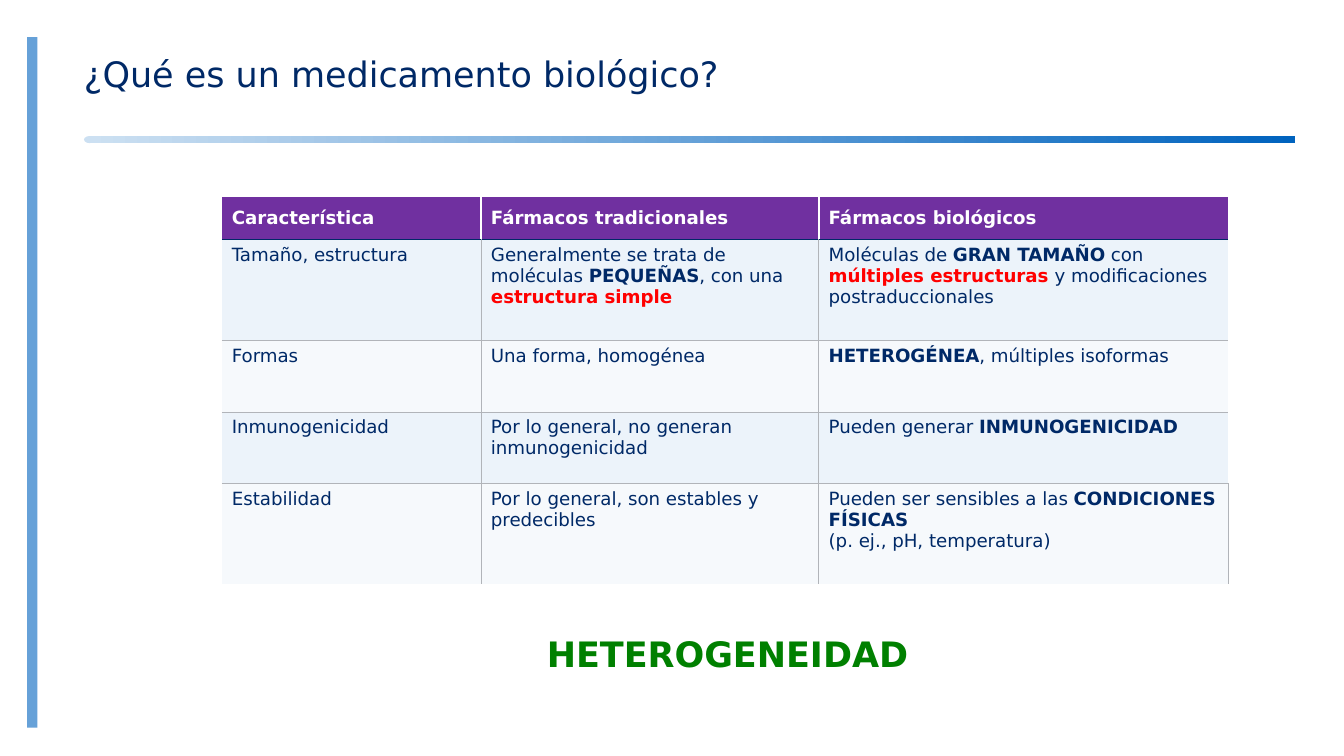
from dataclasses import dataclass
from pptx import Presentation
from pptx.dml.color import RGBColor
from pptx.enum.shapes import MSO_SHAPE
from pptx.enum.text import MSO_ANCHOR, PP_ALIGN
from pptx.oxml import parse_xml
from pptx.oxml.ns import nsdecls
from pptx.util import Inches, Pt


@dataclass(frozen=True)
class Theme:
    font: str = "DejaVu Sans"
    navy: str = "002967"
    white: str = "FFFFFF"
    red: str = "FF0000"
    green: str = "008000"
    purple: str = "7030A0"
    pale: str = "CCE0F2"
    blue: str = "0063BE"
    rail: str = "66A1D8"
    grey: str = "B1B4B9"
    bands: tuple = ("ECF3FA", "F6F9FC")
    big: int = 25
    lead: int = 26
    small: int = 13


theme = Theme()
rgb = RGBColor.from_string
deck = Presentation()
deck.slide_width, deck.slide_height = Inches(13.33), Inches(7.5)
slide = deck.slides.add_slide(deck.slide_layouts[5])
shapes = slide.shapes


def place(x, y, w, h):
    """Turn percentages of the slide into left, top, width and height."""
    wide, high = deck.slide_width, deck.slide_height
    return [int(side * part / 100)
            for side, part in zip((wide, high, wide, high), (x, y, w, h))]


def write(par, text, size, color, bold=False):
    """Add runs split at |; a leading * is bold, a leading ! bold and red."""
    for part in text.split("|"):
        mark = part[:1] if part[:1] in ("*", "!") else ""
        run = par.add_run()
        run.text = part[len(mark):]
        look = {"name": theme.font, "size": Pt(size), "bold": bold or bool(mark)}
        for key, value in look.items():
            setattr(run.font, key, value)
        run.font.color.rgb = rgb(theme.red if mark == "!" else color)


# Rule under the title and rail at the left
decor = [
    (MSO_SHAPE.RECTANGLE, (6.67, 18, 89.7, 0.93), None),
    (MSO_SHAPE.OVAL, (6.25, 18, 0.83, 0.93), theme.pale),
    (MSO_SHAPE.RECTANGLE, (2.03, 4.93, 0.75, 91.33), theme.rail),
]
for kind, area, color in decor:
    shape = shapes.add_shape(kind, *place(*area))
    shape.shadow.inherit = False
    shape.line.fill.background()
    if color:
        shape.fill.solid()
        shape.fill.fore_color.rgb = rgb(color)
    else:
        shape.fill.gradient()
        shape.fill.gradient_angle = 0
        for stop, tint in zip(shape.fill.gradient_stops, (theme.pale, theme.blue)):
            stop.color.rgb = rgb(tint)

# Title and closing word
title = shapes.title
title.left, title.top, title.width, title.height = place(6.25, 4.53, 72.75, 11.07)
close = shapes.add_textbox(*place(16.5, 81.33, 75.25, 11.07))
lines = [
    (title, "¿Qué es un medicamento biológico?", theme.navy, PP_ALIGN.LEFT),
    (close, "*HETEROGENEIDAD", theme.green, PP_ALIGN.CENTER),
]
inset = {"margin_left": 0, "margin_right": 0, "margin_top": 0, "margin_bottom": 0,
         "word_wrap": True, "vertical_anchor": MSO_ANCHOR.MIDDLE}
for shape, text, color, align in lines:
    frame = shape.text_frame
    for key, value in inset.items():
        setattr(frame, key, value)
    par = frame.paragraphs[0]
    par.alignment, par.line_spacing = align, Pt(theme.lead)
    write(par, text, theme.big, color)

# Comparison table
rows = [
    ("Característica", "Fármacos tradicionales", "Fármacos biológicos"),
    ("Tamaño, estructura",
     "Generalmente se trata de moléculas |*PEQUEÑAS|, con una |!estructura simple",
     "Moléculas de |*GRAN TAMAÑO| con |!múltiples estructuras |"
     "y modificaciones postraduccionales"),
    ("Formas", "Una forma, homogénea", "*HETEROGÉNEA|, múltiples isoformas"),
    ("Inmunogenicidad", "Por lo general, no generan inmunogenicidad",
     "Pueden generar |*INMUNOGENICIDAD"),
    ("Estabilidad", "Por lo general, son estables y predecibles",
     "Pueden ser sensibles a las |*CONDICIONES FÍSICAS\n(p. ej., pH, temperatura)"),
]
widths = (19.28, 25.13, 30.46)
heights = (5.73, 13.3, 9.47, 9.47, 13.3)
area = place(16.5, 26, sum(widths), sum(heights))
table = shapes.add_table(len(rows), len(widths), *area).table
table.horz_banding = False
for col, width in zip(table.columns, widths):
    col.width = place(0, 0, width, 0)[2]
for row, height in zip(table.rows, heights):
    row.height = place(0, 0, 0, height)[3]

last, end = len(rows) - 1, len(widths) - 1
thin, under, split = (theme.grey, 0.5), (theme.navy, 1), (theme.white, 1.5)
for r, texts in enumerate(rows):
    head = r == 0
    side = split if head else thin
    for c, text in enumerate(texts):
        cell = table.cell(r, c)
        edges = {
            "lnL": side if c else None,
            "lnR": side if c < end or r == last else None,
            "lnT": None if head else under if r == 1 else thin,
            "lnB": under if head else thin if r < last else None,
        }
        for tag, edge in edges.items():
            color, width = edge or (theme.white, 0)
            ink = (f'<a:solidFill><a:srgbClr val="{color}"/></a:solidFill>'
                   if edge else "<a:noFill/>")
            cell._tc.get_or_add_tcPr().append(parse_xml(
                f'<a:{tag} {nsdecls("a")} w="{Pt(width)}">{ink}</a:{tag}>'))
        cell.fill.solid()
        cell.fill.fore_color.rgb = rgb(theme.purple if head else theme.bands[(r - 1) % 2])
        cell.vertical_anchor = MSO_ANCHOR.MIDDLE if head else MSO_ANCHOR.TOP
        frame = cell.text_frame
        for i, line in enumerate(text.split("\n")):
            par = frame.add_paragraph() if i else frame.paragraphs[0]
            write(par, line, theme.small, theme.white if head else theme.navy, head)

deck.save("out.pptx")
